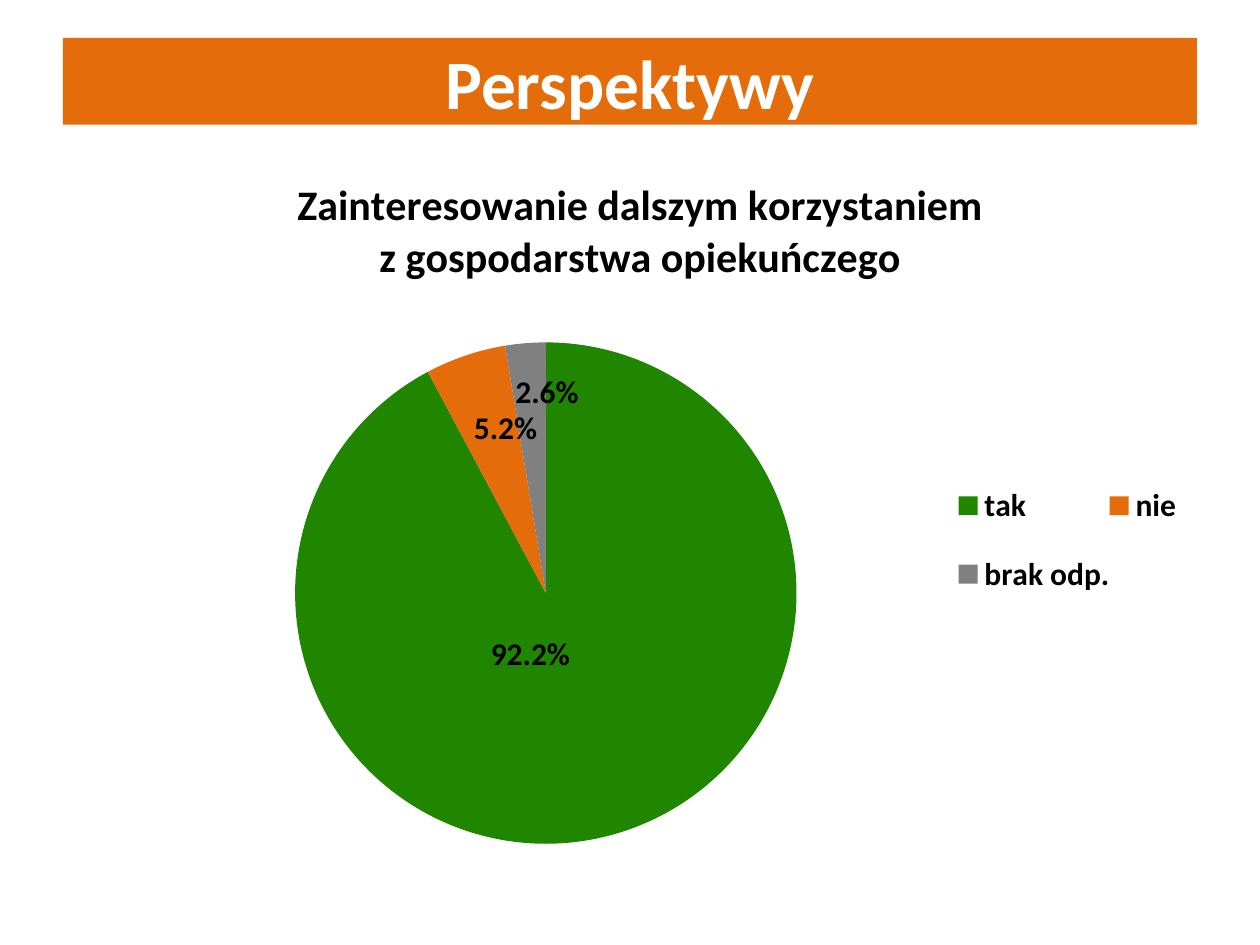
from typing import NamedTuple, Optional

from lxml.etree import Element, SubElement
from pptx import Presentation
from pptx.chart.data import CategoryChartData
from pptx.dml.color import RGBColor
from pptx.enum.chart import XL_CHART_TYPE as ChartType
from pptx.enum.chart import XL_LABEL_POSITION as LabelPos
from pptx.enum.chart import XL_LEGEND_POSITION as LegendPos
from pptx.enum.shapes import MSO_SHAPE as Shape
from pptx.enum.text import MSO_ANCHOR as Anchor
from pptx.enum.text import PP_ALIGN as Align
from pptx.oxml.ns import qn
from pptx.util import Inches, Pt

FONT = "Calibri"
WHITE = RGBColor(0xFF, 0xFF, 0xFF)
BLACK = RGBColor(0, 0, 0)
GREEN = RGBColor(0x20, 0x86, 0x00)
ORANGE = RGBColor(0xE4, 0x6C, 0x0A)
GRAY = RGBColor(0x80, 0x80, 0x80)
PERCENT = "0.0%"


class Answer(NamedTuple):
    name: str
    share: float
    color: RGBColor
    label_dx: float
    label_dy: float


ANSWERS = [
    Answer("tak", 0.922, GREEN, -0.04, -0.08),
    Answer("nie", 0.052, ORANGE, 0, -0.06),
    Answer("brak odp.", 0.026, GRAY, 0.01, -0.1),
]
CHART_TITLE = ["Zainteresowanie dalszym korzystaniem", "z gospodarstwa opiekuńczego"]


def style_font(font, size: float, color: RGBColor = BLACK, bold: bool = True) -> None:
    font.name = FONT
    font.size = Pt(size)
    font.bold = bold
    font.color.rgb = color


def make_layout(x: float, y: float, w: Optional[float] = None,
                h: Optional[float] = None, inner: bool = False, edge: bool = True):
    layout = Element(qn("c:layout"))
    manual = SubElement(layout, qn("c:manualLayout"))
    settings = {"layoutTarget": "inner" if inner else None,
                "xMode": "edge" if edge else None,
                "yMode": "edge" if edge else None,
                "x": x, "y": y, "w": w, "h": h}
    for tag, value in settings.items():
        if value is not None:
            SubElement(manual, qn(f"c:{tag}")).set("val", str(value))
    return layout


def place_part(part, layout, index: int) -> None:
    for old in part.findall(qn("c:layout")):
        part.remove(old)
    part.insert(index, layout)


def add_banner(slide, text: str) -> None:
    sp = slide.shapes.add_shape(Shape.RECTANGLE, Inches(0.5), Inches(0.3),
                                Inches(9), Inches(0.69))
    sp.shadow.inherit = False
    sp.fill.solid()
    sp.fill.fore_color.rgb = ORANGE
    sp.line.fill.background()
    tf = sp.text_frame
    tf.text = text
    tf.word_wrap = True
    tf.vertical_anchor = Anchor.MIDDLE
    p = tf.paragraphs[0]
    p.alignment = Align.CENTER
    style_font(p.runs[0].font, 39.6, WHITE)


def add_title(chart, lines: list[str]) -> None:
    tf = chart.chart_title.text_frame
    tf.text = lines[0]
    for line in lines[1:]:
        tf.add_paragraph().text = line
    for p in tf.paragraphs:
        p.alignment = Align.CENTER
        style_font(p.runs[0].font, 24)


def style_slice(point, answer: Answer) -> None:
    point.format.fill.solid()
    point.format.fill.fore_color.rgb = answer.color
    point.format.line.fill.background()
    label = point.data_label
    style_font(label.font, 18)
    label.position = LabelPos.CENTER


def add_pie(slide, answers: list[Answer]) -> None:
    data = CategoryChartData(number_format=PERCENT)
    data.categories = [a.name for a in answers]
    data.add_series("Series 1", [a.share for a in answers])
    chart = slide.shapes.add_chart(ChartType.PIE, Inches(0.51), Inches(1.15),
                                   Inches(9.1), Inches(6.03), data).chart
    style_font(chart.font, 10, bold=False)
    add_title(chart, CHART_TITLE)
    chart.has_legend = True
    chart.legend.position = LegendPos.RIGHT
    chart.legend.include_in_layout = False
    style_font(chart.legend.font, 18)

    plot = chart.plots[0]
    plot.vary_by_categories = True
    plot.has_data_labels = True
    series = plot.series[0]
    labels = series.data_labels
    labels.show_value = True
    labels.show_percentage = False
    labels.number_format = PERCENT
    labels.number_format_is_linked = False
    labels.position = LabelPos.CENTER
    style_font(labels.font, 18)
    for i, answer in enumerate(answers):
        style_slice(series.points[i], answer)

    root = chart.element if hasattr(chart, "element") else chart._chartSpace
    for label, answer in zip(root.xpath(".//c:ser//c:dLbl"), answers):
        place_part(label, make_layout(answer.label_dx, answer.label_dy, edge=False), 1)
        number = Element(qn("c:numFmt"), formatCode=PERCENT, sourceLinked="0")
        label.insert(2, number)
    place_part(root.xpath(".//c:chart/c:title")[0], make_layout(0.2, 0.04), 1)
    place_part(root.xpath(".//c:plotArea")[0],
               make_layout(0.2, 0.26, 0.44, 0.66, inner=True), 0)
    place_part(root.xpath(".//c:legend")[0], make_layout(0.78, 0.41, 0.19, 0.22), 1)


def main() -> None:
    prs = Presentation()
    prs.slide_width = Inches(10)
    prs.slide_height = Inches(7.5)
    slide = prs.slides.add_slide(prs.slide_layouts[6])
    add_banner(slide, "Perspektywy")
    add_pie(slide, ANSWERS)
    prs.save("out.pptx")


if __name__ == "__main__":
    main()
